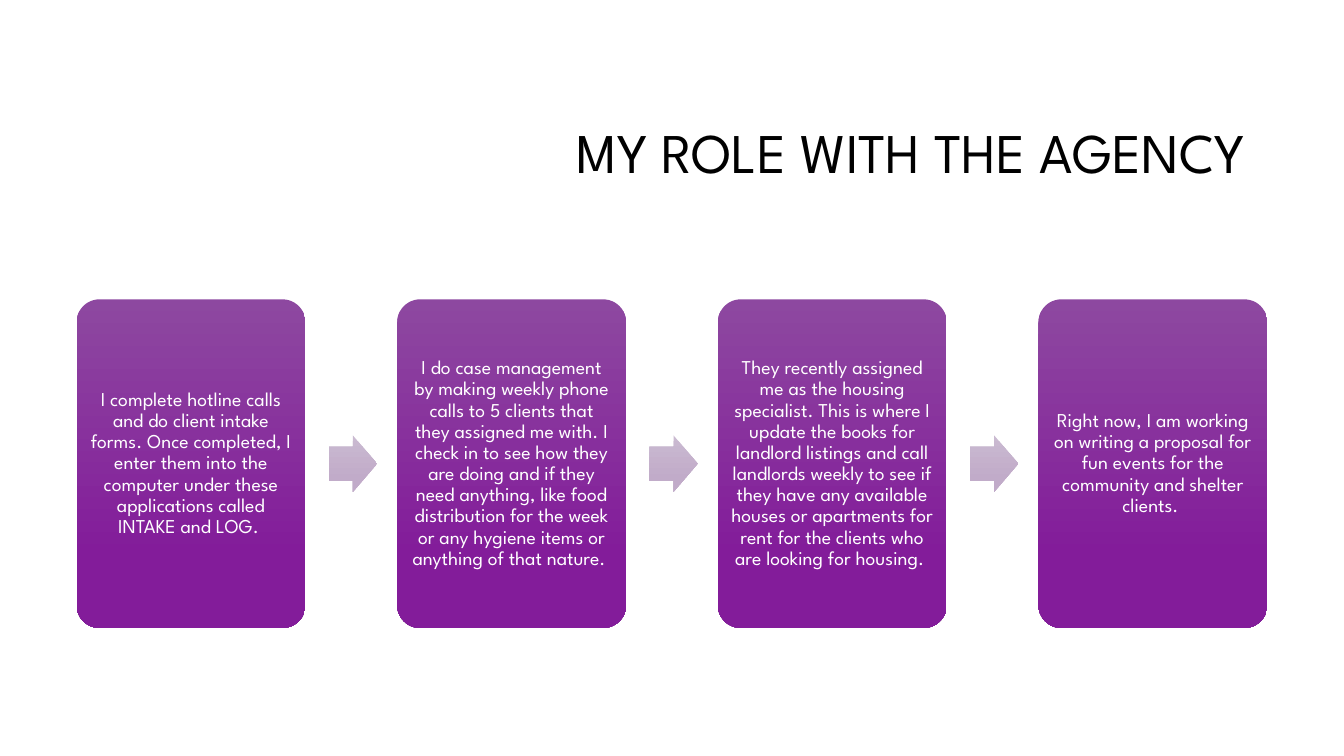
"""Build the slide that shows a housing worker's role as a four-step process."""
import pptx
import pptx.util
from pptx.dml.color import RGBColor
from pptx.enum.shapes import MSO_SHAPE
from pptx.enum.text import MSO_ANCHOR, MSO_AUTO_SIZE, PP_ALIGN

TITLE = "MY ROLE WITH THE AGENCY "
STEPS = [
    "I complete hotline calls and do client intake forms. Once completed, I enter them "
    "into the computer under these applications called INTAKE and LOG. ",
    "I do case management by making weekly phone calls to 5 clients that they assigned me "
    "with. I check in to see how they are doing and if they need anything, like food "
    "distribution for the week or any hygiene items or anything of that nature. ",
    "They recently assigned me as the housing specialist. This is where I update the books "
    "for landlord listings and call landlords weekly to see if they have any available "
    "houses or apartments for rent for the clients who are looking for housing. ",
    "Right now, I am working on writing a proposal for fun events for the community and "
    "shelter clients. ",
]

FONT = "League Spartan"
BLACK = RGBColor(0x00, 0x00, 0x00)
WHITE = RGBColor(0xFF, 0xFF, 0xFF)
CARD_COLORS = RGBColor(0x8D, 0x48, 0xA0), RGBColor(0x83, 0x1C, 0x9A)
ARROW_COLORS = RGBColor(0xCA, 0xBA, 0xD1), RGBColor(0xC1, 0xAB, 0xC9)
GRADIENT_STOPS = 0, 0.78

SLIDE_WIDTH, SLIDE_HEIGHT = 13.33, 7.5
FIRST_LEFT, MIDDLE, PITCH = 0.76, 4.6, 3.18
CARD_WIDTH, CARD_HEIGHT = 2.27, 3.26
ARROW_WIDTH, ARROW_HEIGHT, ARROW_OFFSET = 0.48, 0.56, 2.5
CARD_INSET = 0.06


def add_step_shape(slide, kind, left, width, height, adjustments, colors):
    """Add a gradient shape centred on the row of steps."""
    lengths = (left, MIDDLE - height / 2, width, height)
    shape = slide.shapes.add_shape(kind, *map(pptx.util.Inches, lengths))
    for index, value in enumerate(adjustments):
        shape.adjustments[index] = value
    shape.shadow.inherit = False
    shape.line.fill.background()
    shape.fill.gradient()
    shape.fill.gradient_angle = 270
    for stop, position, color in zip(shape.fill.gradient_stops, GRADIENT_STOPS, colors):
        stop.position = position
        stop.color.rgb = color
    return shape


def write(shape, text, size, color, alignment):
    """Set one formatted, vertically centred paragraph."""
    frame = shape.text_frame
    frame.text = text
    frame.word_wrap = True
    frame.auto_size = MSO_AUTO_SIZE.NONE
    frame.vertical_anchor = MSO_ANCHOR.MIDDLE
    para = frame.paragraphs[0]
    para.alignment = alignment
    para.line_spacing = 0.9
    for span in para.runs:
        span.font.name = FONT
        span.font.size = pptx.util.Pt(size)
        span.font.color.rgb = color


def main():
    """Create and save the deck."""
    deck = pptx.Presentation()
    deck.slide_width = pptx.util.Inches(SLIDE_WIDTH)
    deck.slide_height = pptx.util.Inches(SLIDE_HEIGHT)
    page = deck.slides.add_slide(deck.slide_layouts[5])

    title = page.shapes.title
    title.left, title.top = pptx.util.Inches(3.17), pptx.util.Inches(0.84)
    title.width, title.height = pptx.util.Inches(9.42), pptx.util.Inches(1.41)
    write(title, TITLE, 40, BLACK, PP_ALIGN.RIGHT)

    for index, step in enumerate(STEPS):
        left = FIRST_LEFT + index * PITCH
        card = add_step_shape(page, MSO_SHAPE.ROUNDED_RECTANGLE, left,
                              CARD_WIDTH, CARD_HEIGHT, [0.1], CARD_COLORS)
        write(card, step, 14, WHITE, PP_ALIGN.CENTER)
        frame = card.text_frame
        frame.margin_left = frame.margin_right = pptx.util.Inches(CARD_INSET)
        frame.margin_top = frame.margin_bottom = pptx.util.Inches(CARD_INSET)
        if index < len(STEPS) - 1:
            add_step_shape(page, MSO_SHAPE.RIGHT_ARROW, left + ARROW_OFFSET,
                           ARROW_WIDTH, ARROW_HEIGHT, [0.6, 0.5], ARROW_COLORS)

    deck.save("out.pptx")


if __name__ == "__main__":
    main()
